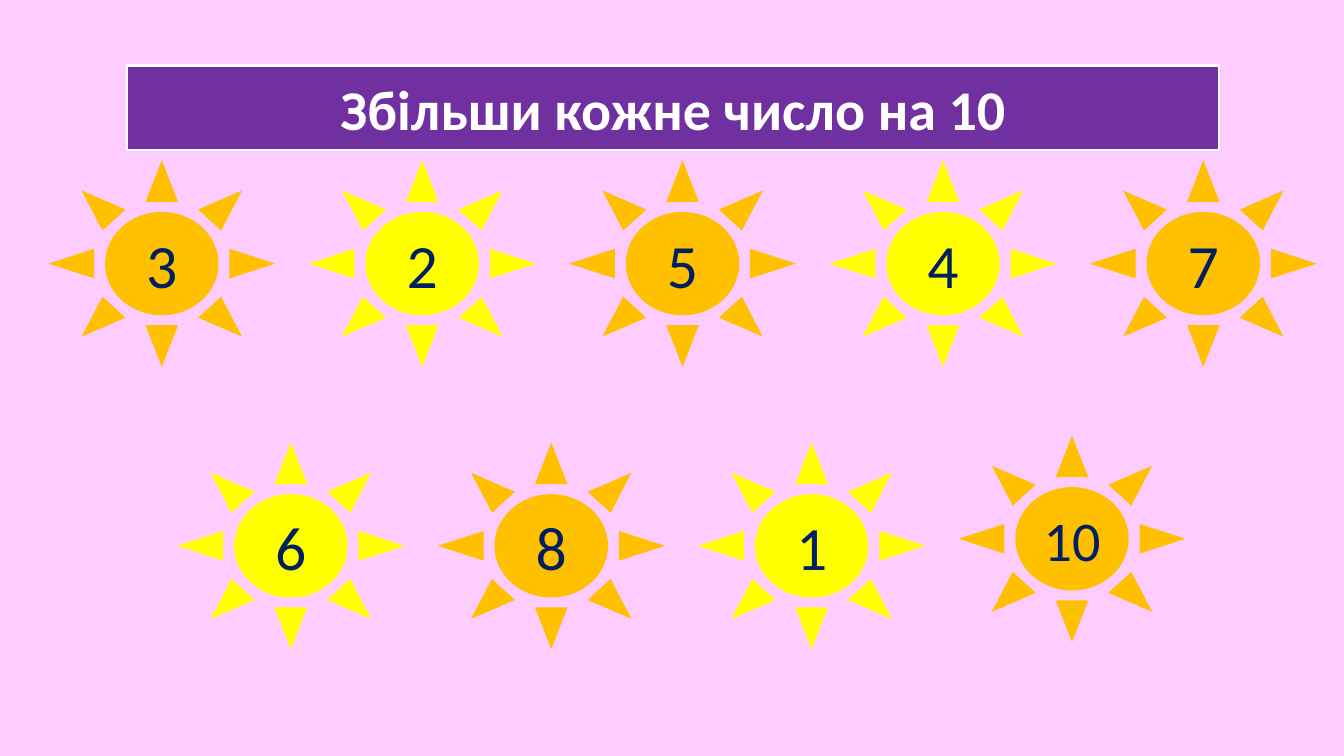
from dataclasses import dataclass

from pptx import Presentation
from pptx import util as u
from pptx.dml.color import RGBColor
from pptx.enum import shapes, text

GOLD, YELLOW = "FFC000", "FFFF00"
NAVY, PURPLE = "002060", "7030A0"
WHITE, PINK = "FFFFFF", "FFCCFF"
WIDTH, HEIGHT, STEP = 2.25, 2.05, 2.5825


@dataclass
class Sun:
    label: str
    left: float
    top: float
    fill: str
    size: int = 44


def paint(fill, color: str) -> None:
    fill.solid()
    fill.fore_color.rgb = RGBColor.from_string(color)


def write(shape, words: str, *, size: int, color: str, bold: bool = False) -> None:
    frame = shape.text_frame
    frame.word_wrap = True
    frame.auto_size = text.MSO_AUTO_SIZE.NONE
    frame.vertical_anchor = text.MSO_ANCHOR.MIDDLE
    para = frame.paragraphs[0]
    para.alignment = text.PP_ALIGN.CENTER
    run = para.add_run()
    run.text = words
    font = run.font
    font.name, font.size, font.bold = "Calibri", u.Pt(size), bold
    paint(font.fill, color)


def draw(slide, sun: Sun) -> None:
    shape = slide.shapes.add_shape(
        shapes.MSO_SHAPE.SUN, u.Inches(sun.left), u.Inches(sun.top),
        u.Inches(WIDTH), u.Inches(HEIGHT))
    shape.shadow.inherit = False
    paint(shape.fill, sun.fill)
    shape.line.fill.background()
    write(shape, sun.label, size=sun.size, color=NAVY)


def main() -> None:
    deck = Presentation()
    deck.slide_width, deck.slide_height = u.Inches(13.33), u.Inches(7.5)
    slide = deck.slides.add_slide(deck.slide_layouts[5])
    paint(slide.background.fill, PINK)

    # Title banner
    title = slide.shapes.title
    title.left, title.top = u.Inches(1.26), u.Inches(0.65)
    title.width, title.height = u.Inches(10.83), u.Inches(0.84)
    paint(title.fill, PURPLE)
    paint(title.line.fill, WHITE)
    title.line.width = u.Pt(1.5)
    write(title, "Збільши кожне число на 10", size=40, color=WHITE, bold=True)

    # Two rows of suns, colours alternating
    upper = [Sun(label, 0.48 + i * STEP, 1.59, (GOLD, YELLOW)[i % 2])
             for i, label in enumerate("32547")]
    lower = [Sun(label, 1.76 + i * STEP, 4.39, (YELLOW, GOLD)[i % 2])
             for i, label in enumerate("681")]
    # The two-digit sun sits a little higher, with smaller text
    last = Sun("10", 1.76 + 3 * STEP, 4.32, GOLD, 40)
    for sun in [*upper, *lower, last]:
        draw(slide, sun)

    deck.save("out.pptx")


if __name__ == "__main__":
    main()
